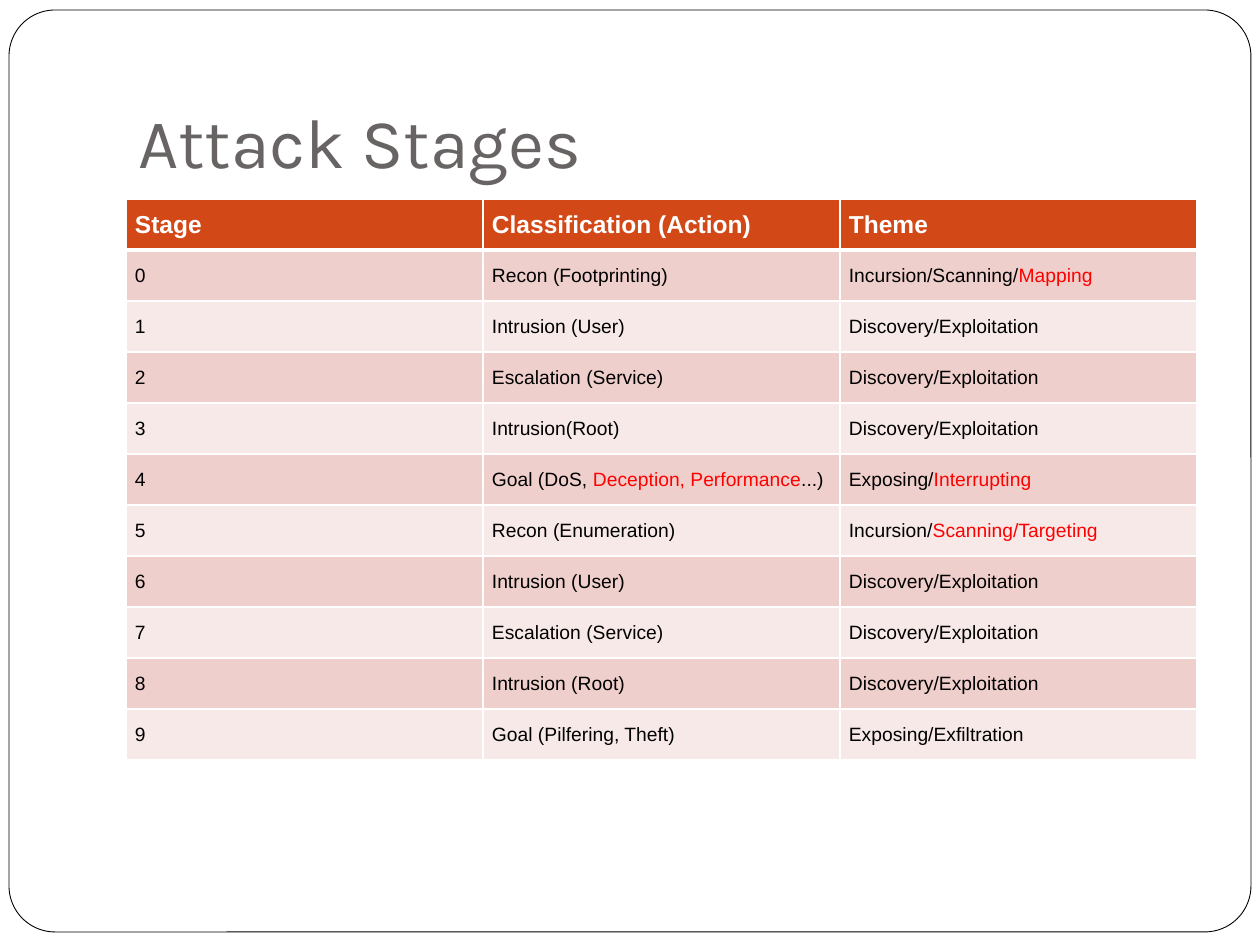
import pptx
import pptx.dml.color
import pptx.enum.shapes
import pptx.enum.text
import pptx.oxml
import pptx.oxml.ns
import pptx.util

SCALE = 914400 / 126
BLACK, WHITE, RED = "000000", "FFFFFF", "FF0000"
GREY, ORANGE = "696464", "D34817"
BANDS = ("EFCFCC", "F7E9E8")
EXPLOIT = "Discovery/Exploitation"
HEADER = ("Stage", "Classification (Action)", "Theme")
STAGES = (
    ("Recon (Footprinting)", "Incursion/Scanning/*Mapping"),
    ("Intrusion (User)", EXPLOIT),
    ("Escalation (Service)", EXPLOIT),
    ("Intrusion(Root)", EXPLOIT),
    ("Goal (DoS, *Deception, Performance*...)", "Exposing/*Interrupting"),
    ("Recon (Enumeration)", "Incursion/*Scanning/Targeting"),
    ("Intrusion (User)", EXPLOIT),
    ("Escalation (Service)", EXPLOIT),
    ("Intrusion (Root)", EXPLOIT),
    ("Goal (Pilfering, Theft)", "Exposing/Exfiltration"),
)


def px(n):
    """Convert pixels to EMU."""
    return pptx.util.Emu(round(n * SCALE))


def rgb(value):
    """Turn a hex string into a colour."""
    return pptx.dml.color.RGBColor.from_string(value)


def write(tf, text, size=11, color=BLACK, font="Arial", bold=False):
    """Write text into a frame, with the parts between asterisks in red."""
    p = tf.paragraphs[0]
    for i, part in enumerate(text.split("*")):
        r = p.add_run()
        r.text = part
        r.font.size = pptx.util.Pt(size)
        r.font.name = font
        r.font.bold = bold
        r.font.color.rgb = rgb(RED if i % 2 else color)


class Deck:
    """Hold the presentation style and the current slide."""

    def __init__(self, prs):
        """Add a blank slide to the presentation."""
        self.s = prs.slides.add_slide(prs.slide_layouts[6])

    def frame(self, x, y, w, h):
        """Draw the rounded border of the slide."""
        kind = pptx.enum.shapes.MSO_SHAPE.ROUNDED_RECTANGLE
        sp = self.s.shapes.add_shape(kind, px(x), px(y), px(w), px(h))
        sp.adjustments[0] = 0.05
        sp.shadow.inherit = False
        sp.fill.solid()
        sp.fill.fore_color.rgb = rgb(WHITE)
        sp.line.color.rgb = rgb(BLACK)
        sp.line.width = pptx.util.Pt(0.5)

    def title(self, text, x, y, w, h):
        """Add the slide title, anchored to the bottom of its box."""
        tf = self.s.shapes.add_textbox(px(x), px(y), px(w), px(h)).text_frame
        tf.word_wrap = True
        tf.vertical_anchor = pptx.enum.text.MSO_ANCHOR.BOTTOM
        tf.margin_bottom = pptx.util.Inches(0.1)
        write(tf, text, size=40, color=GREY, font="Karla")

    def border(self, cell, side, width):
        """Draw one white side of a table cell."""
        ln = pptx.oxml.parse_xml(
            f'<a:ln{side} {pptx.oxml.ns.nsdecls("a")} w="{pptx.util.Pt(width)}">'
            f'<a:solidFill><a:srgbClr val="{WHITE}"/></a:solidFill></a:ln{side}>')
        cell._tc.get_or_add_tcPr().append(ln)

    def cell(self, cell, text, fill, header, below_header):
        """Fill one table cell with its borders, colour and text."""
        thickness = {"L": 1, "R": 1, "T": 3 if below_header else 1, "B": 3 if header else 1}
        for side, width in thickness.items():
            self.border(cell, side, width)
        cell.fill.solid()
        cell.fill.fore_color.rgb = rgb(fill)
        cell.vertical_anchor = pptx.enum.text.MSO_ANCHOR.MIDDLE
        cell.margin_left = cell.margin_right = px(9)
        cell.margin_top = cell.margin_bottom = 0
        style = {"size": 14, "color": WHITE, "bold": True} if header else {}
        write(cell.text_frame, text, **style)

    def table(self, rows, x, y, col_width, row_height):
        """Add a table with a header row and banded body rows."""
        n, m = len(rows), len(rows[0])
        table = self.s.shapes.add_table(
            n, m, px(x), px(y), px(m * col_width), px(n * row_height)).table
        for col in table.columns:
            col.width = px(col_width)
        for i, row in enumerate(rows):
            table.rows[i].height = px(row_height)
            fill = BANDS[(i - 1) % 2] if i else ORANGE
            for j, text in enumerate(row):
                self.cell(table.cell(i, j), text, fill, i == 0, i == 1)


def main():
    """Build the slide and save it."""
    prs = pptx.Presentation()
    prs.slide_width, prs.slide_height = px(1260), px(945)
    deck = Deck(prs)
    deck.frame(9, 10, 1242, 922)
    deck.title("Attack Stages", 126, 38, 1071, 157)
    rows = [HEADER] + [(str(i), *stage) for i, stage in enumerate(STAGES)]
    deck.table(rows, 126, 199, 357, 51)
    prs.save("out.pptx")


if __name__ == "__main__":
    main()
